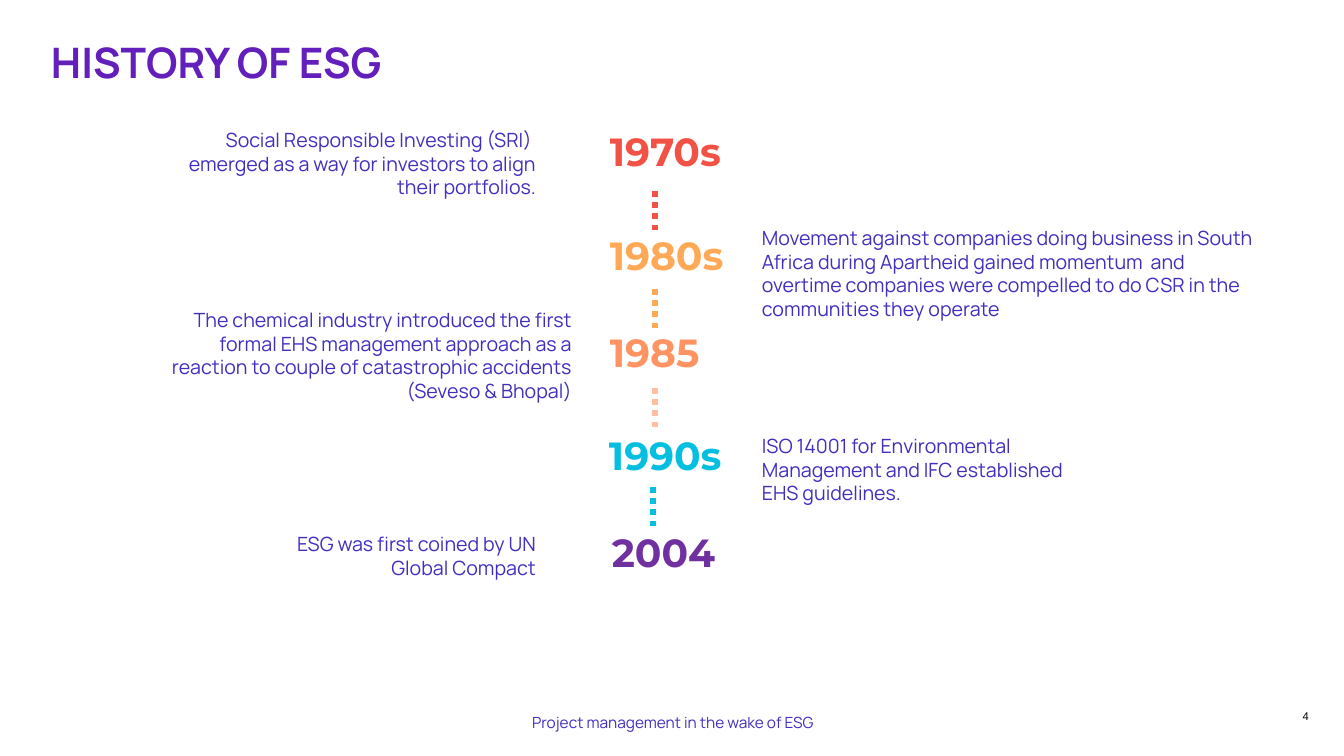
from lxml.etree import SubElement
from pptx import Presentation
from pptx.dml.color import RGBColor
from pptx.enum.dml import MSO_LINE
from pptx.enum.shapes import MSO_CONNECTOR
from pptx.enum.text import MSO_ANCHOR, MSO_AUTO_SIZE, PP_ALIGN
from pptx.oxml.ns import qn
from pptx.util import Emu, Pt

EMU_PER_PX = 914400 / 100.8

COLORS = {
    "title": "621FBB",
    "body": "402FBF",
    "number": "000000",
    "red": "F25245",
    "amber": "FFA956",
    "orange": "FF9361",
    "peach": "FFBEA0",
    "cyan": "05BFE0",
    "purple": "7030A0",
}

# Year label, color, box (left, top, width, height)
YEARS = [
    ("1970s", "red", (600, 122, 135, 57)),
    ("1980s", "amber", (600, 226, 152, 57)),
    ("1985", "orange", (600, 323, 144, 57)),
    ("1990s", "cyan", (599, 426, 144, 57)),
    ("2004", "purple", (602, 523, 133, 57)),
]

# Event text, alignment, box
EVENTS = [
    ("Social Responsible Investing (SRI)  emerged as a way for investors "
     "to align their portfolios.", PP_ALIGN.RIGHT, (155, 123, 391, 82)),
    ("Movement against companies doing business in South Africa during "
     "Apartheid gained momentum  and overtime companies were compelled to do "
     "CSR in the communities they operate", PP_ALIGN.LEFT, (752, 221, 512, 105)),
    ("The chemical industry introduced the first formal EHS management "
     "approach as a reaction to couple of catastrophic accidents "
     "(Seveso & Bhopal)", PP_ALIGN.RIGHT, (155, 303, 427, 105)),
    ("ISO 14001 for Environmental Management and IFC established EHS "
     "guidelines.", PP_ALIGN.LEFT, (752, 429, 354, 82)),
    ("ESG was first coined by UN Global Compact", PP_ALIGN.RIGHT,
     (256, 527, 290, 57)),
]

# Dotted links: color, center x, top
LINKS = [("red", 655, 191), ("amber", 655, 289),
         ("peach", 655, 388), ("cyan", 653, 487)]
LINK_HEIGHT = 40


def px(length):
    return Emu(round(length * EMU_PER_PX))


def color(name):
    return RGBColor.from_string(COLORS[name])


def write_text(shape, text, size, color_name, font="Manrope", bold=False,
               align=PP_ALIGN.LEFT, anchor=MSO_ANCHOR.TOP, inset=True,
               line_spacing=None):
    frame = shape.text_frame
    frame.word_wrap = True
    frame.auto_size = MSO_AUTO_SIZE.NONE
    frame.vertical_anchor = anchor
    if not inset:
        frame.margin_left = frame.margin_right = 0
        frame.margin_top = frame.margin_bottom = 0
    paragraph = frame.paragraphs[0]
    paragraph.alignment = align
    paragraph.line_spacing = line_spacing
    run = paragraph.add_run()
    run.text = text
    run.font.name = font
    run.font.size = Pt(size)
    run.font.bold = bold
    run.font.color.rgb = color(color_name)


def add_text(slide, box, text, size, color_name, **text_format):
    shape = slide.shapes.add_textbox(*map(px, box))
    write_text(shape, text, size, color_name, **text_format)


def set_title(slide, box, text):
    title = slide.shapes.title
    title.left, title.top, title.width, title.height = map(px, box)
    write_text(title, text, 30, "title", bold=True, anchor=MSO_ANCHOR.MIDDLE,
               inset=False, line_spacing=0.9)


def add_link(slide, color_name, x, top):
    link = slide.shapes.add_connector(
        MSO_CONNECTOR.STRAIGHT, px(x), px(top), px(x), px(top + LINK_HEIGHT))
    link.line.color.rgb = color(color_name)
    link.line.width = Pt(4)
    link.line.dash_style = MSO_LINE.ROUND_DOT  # written as sysDot
    SubElement(link.element.spPr, qn("a:effectLst"))


def main():
    presentation = Presentation()
    presentation.slide_width = px(1344)
    presentation.slide_height = px(756)
    title_only = presentation.slide_layouts[5]
    slide = presentation.slides.add_slide(title_only)

    set_title(slide, (51, 44, 1274, 41), "HISTORY OF ESG")

    # Timeline
    for year, color_name, box in YEARS:
        add_text(slide, box, year, 28, color_name, font="Montserrat", bold=True)
    for color_name, x, top in LINKS:
        add_link(slide, color_name, x, top)
    for text, align, box in EVENTS:
        add_text(slide, box, text, 14, "body", align=align)

    # Footer and slide number
    add_text(slide, (446, 701, 454, 31), "Project management in the wake of ESG",
             11, "body", align=PP_ALIGN.CENTER, anchor=MSO_ANCHOR.BOTTOM,
             inset=False)
    add_text(slide, (1264, 701, 45, 22), "4", 8, "number", font="Arial",
             align=PP_ALIGN.RIGHT, anchor=MSO_ANCHOR.BOTTOM, inset=False)

    presentation.save("out.pptx")


if __name__ == "__main__":
    main()
